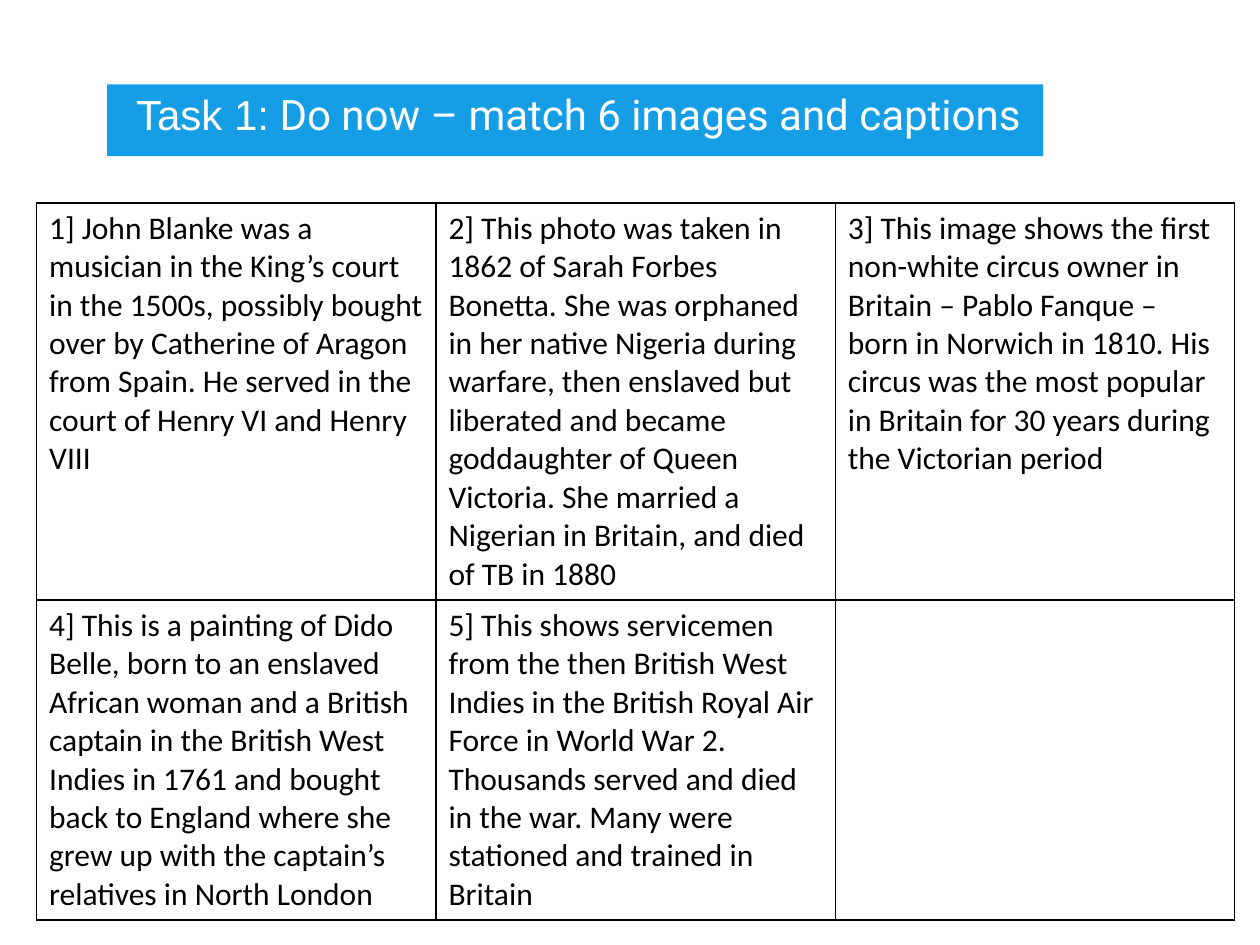
from lxml import etree
from pptx import Presentation
from pptx.dml.color import RGBColor
from pptx.enum.shapes import MSO_SHAPE
from pptx.enum.text import MSO_ANCHOR, PP_ALIGN
from pptx.oxml.ns import qn
from pptx.util import Inches, Pt

RECTANGLE = MSO_SHAPE.RECTANGLE
TOP = MSO_ANCHOR.TOP
LEFT = PP_ALIGN.LEFT

BLUE = RGBColor(0x15, 0x9E, 0xE5)
WHITE = RGBColor(0xFF, 0xFF, 0xFF)
BLACK = RGBColor(0, 0, 0)

TITLE_ONLY = 5
ROW_HEIGHT = 2.45

TITLE_RUNS = [
    ("Task 1:", "Arial"),
    (" Do now – match 6 images and captions", "Roboto"),
]

CAPTIONS = [
    [
        "1] John Blanke was a musician in the King’s court in the 1500s, possibly "
        "bought over by Catherine of Aragon from Spain. He served in the court of "
        "Henry VI and Henry VIII",
        "2] This photo was taken in 1862 of Sarah Forbes Bonetta. She was orphaned "
        "in her native Nigeria during warfare, then enslaved but liberated and "
        "became goddaughter of Queen Victoria. She married a Nigerian in Britain, "
        "and died of TB in 1880",
        "3] This image shows the first non-white circus owner in Britain – Pablo "
        "Fanque – born in Norwich in 1810. His circus was the most popular in "
        "Britain for 30 years during the Victorian period",
    ],
    [
        "4] This is a painting of Dido Belle, born to an enslaved African woman and "
        "a British captain in the British West Indies in 1761 and bought back to "
        "England where she grew up with the captain’s relatives in North London",
        "5] This shows servicemen from the then British West Indies in the British "
        "Royal Air Force in World War 2. Thousands served and died in the war. Many "
        "were stationed and trained in Britain",
        "",
    ],
]


class SlideBuilder:
    """Holds the text style and the slide being filled."""

    title_size = Pt(24)
    caption_size = Pt(18)
    caption_font = "Calibri"
    border_width = Pt(1)

    def __init__(self, slide):
        self.slide = slide

    def title(self, runs, left, top, width, height):
        title = self.slide.shapes.title
        title.left, title.top = Inches(left), Inches(top)
        title.width, title.height = Inches(width), Inches(height)
        frame = title.text_frame
        frame.word_wrap = True
        frame.vertical_anchor = TOP
        frame.margin_left = frame.margin_right = 0
        frame.margin_top = frame.margin_bottom = 0
        paragraph = frame.paragraphs[0]
        paragraph.alignment = LEFT
        paragraph.line_spacing = 0.8
        paragraph.font.size = self.title_size
        paragraph.font.color.rgb = WHITE
        for text, font_name in runs:
            run = paragraph.add_run()
            run.text = text
            run.font.name = font_name

    def banner(self, left, top, width, height):
        banner = self.slide.shapes.add_shape(
            RECTANGLE, Inches(left), Inches(top), Inches(width), Inches(height))
        banner.shadow.inherit = False
        banner.fill.solid()
        banner.fill.fore_color.rgb = BLUE
        banner.line.fill.background()
        # The banner lies behind the title
        self.slide.shapes.title.element.addprevious(banner.element)

    def table(self, rows, left, top, width, row_height):
        table = self.slide.shapes.add_table(
            len(rows), len(rows[0]), Inches(left), Inches(top),
            Inches(width), Inches(row_height * len(rows))).table
        table.first_row = table.horz_banding = False
        for row_index, captions in enumerate(rows):
            for column_index, caption in enumerate(captions):
                self.caption(table.cell(row_index, column_index), caption)

    def caption(self, cell, text):
        cell.text = text
        font = cell.text_frame.paragraphs[0].font
        font.size = self.caption_size
        font.name = self.caption_font
        font.color.rgb = BLACK
        self.borders(cell)
        cell.fill.background()

    def borders(self, cell):
        properties = cell._tc.get_or_add_tcPr()
        for side in ("a:lnL", "a:lnR", "a:lnT", "a:lnB"):
            line = etree.SubElement(properties, qn(side), w=str(self.border_width))
            fill = etree.SubElement(line, qn("a:solidFill"))
            etree.SubElement(fill, qn("a:srgbClr"), val=str(BLACK))


def main():
    presentation = Presentation()
    presentation.slide_width = Inches(10)
    presentation.slide_height = Inches(7.5)
    layout = presentation.slide_layouts[TITLE_ONLY]
    builder = SlideBuilder(presentation.slides.add_slide(layout))

    # Heading
    builder.banner(0.85, 0.67, 7.43, 0.57)
    builder.title(TITLE_RUNS, 1.08, 0.78, 7.2, 0.34)

    # Captions to match, with one cell left open
    builder.table(CAPTIONS, 0.29, 1.61, 9.51, ROW_HEIGHT)

    presentation.save("out.pptx")


if __name__ == "__main__":
    main()
